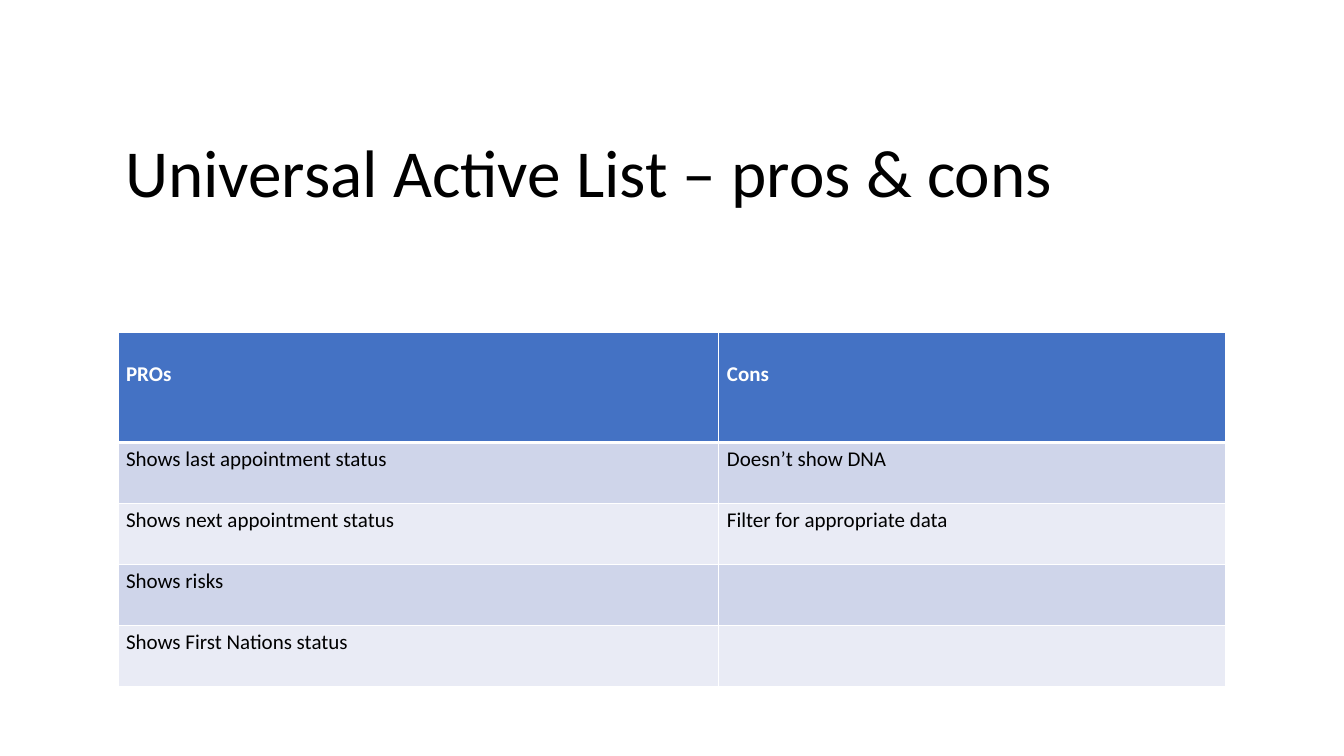
from lxml.etree import SubElement
from pptx import Presentation
from pptx.dml.color import RGBColor
from pptx.enum.text import MSO_ANCHOR, MSO_AUTO_SIZE, PP_ALIGN
from pptx.oxml.ns import qn
from pptx.util import Inches, Pt

BLACK = RGBColor(0x00, 0x00, 0x00)
WHITE = RGBColor(0xFF, 0xFF, 0xFF)
HEADER_BLUE = RGBColor(0x44, 0x72, 0xC4)
BANDS = (RGBColor(0xCF, 0xD5, 0xEA), RGBColor(0xE9, 0xEB, 0xF5))

ROWS = [
    ("PROs", "Cons"),
    ("Shows last appointment status", "Doesn’t show DNA"),
    ("Shows next appointment status", "Filter for appropriate data"),
    ("Shows risks", ""),
    ("Shows First Nations status", ""),
]
COLUMN_WIDTHS = (5.96, 5.03)
TABLE_HEIGHT = 3.51
HEADER_HEIGHT = 1.09
HEADER_TOP_MARGIN = 0.29


def write_text(text_frame, text, size=15, color=BLACK, bold=False, font="Calibri", line_spacing=1.0):
    paragraph = text_frame.paragraphs[0]
    paragraph.alignment = PP_ALIGN.LEFT
    paragraph.line_spacing = line_spacing
    paragraph.font.size = Pt(size)
    if text:
        run = paragraph.add_run()
        run.text = text
        run.font.name = font
        run.font.size = Pt(size)
        run.font.bold = bold
        run.font.color.rgb = color


class SlideBuilder:
    def __init__(self, presentation):
        self.slide = presentation.slides.add_slide(presentation.slide_layouts[5])
        self.border_color = WHITE

    def title(self, text, left, top, width, height):
        shape = self.slide.shapes.title
        shape.left, shape.top = Inches(left), Inches(top)
        shape.width, shape.height = Inches(width), Inches(height)
        text_frame = shape.text_frame
        text_frame.word_wrap = True
        text_frame.auto_size = MSO_AUTO_SIZE.NONE
        text_frame.vertical_anchor = MSO_ANCHOR.MIDDLE
        write_text(text_frame, text, size=48, line_spacing=0.9)

    def borders(self, cell, top, bottom):
        properties = cell._tc.get_or_add_tcPr()
        for side, width in (("L", 1), ("R", 1), ("T", top), ("B", bottom)):
            line = SubElement(properties, qn(f"a:ln{side}"), w=str(Pt(width)))
            fill = SubElement(line, qn("a:solidFill"))
            SubElement(fill, qn("a:srgbClr"), val=str(self.border_color))

    def cell(self, cell, text, row_index):
        header = row_index == 0
        self.borders(cell, top=3 if row_index == 1 else 1, bottom=3 if header else 1)
        cell.fill.solid()
        cell.fill.fore_color.rgb = HEADER_BLUE if header else BANDS[(row_index - 1) % 2]
        cell.margin_left = cell.margin_right = Inches(0.08)
        cell.margin_top = Inches(HEADER_TOP_MARGIN if header else 0.04)
        cell.margin_bottom = Inches(0.04)
        write_text(cell.text_frame, text, color=WHITE if header else BLACK, bold=header)

    def table(self, rows, left, top):
        table = self.slide.shapes.add_table(
            len(rows), len(COLUMN_WIDTHS), Inches(left), Inches(top),
            Inches(sum(COLUMN_WIDTHS)), Inches(TABLE_HEIGHT),
        ).table
        for column, width in zip(table.columns, COLUMN_WIDTHS):
            column.width = Inches(width)
        body_height = (TABLE_HEIGHT - HEADER_HEIGHT) / (len(rows) - 1)
        for row_index, texts in enumerate(rows):
            table.rows[row_index].height = Inches(body_height if row_index else HEADER_HEIGHT)
            for column_index, text in enumerate(texts):
                self.cell(table.cell(row_index, column_index), text, row_index)


def main():
    presentation = Presentation()
    presentation.slide_width = Inches(13.33)
    presentation.slide_height = Inches(7.5)
    builder = SlideBuilder(presentation)
    builder.title("Universal Active List – pros & cons", 1.14, 0.89, 11.13, 1.7)
    builder.table(ROWS, 1.17, 3.3)
    presentation.save("out.pptx")


if __name__ == "__main__":
    main()
